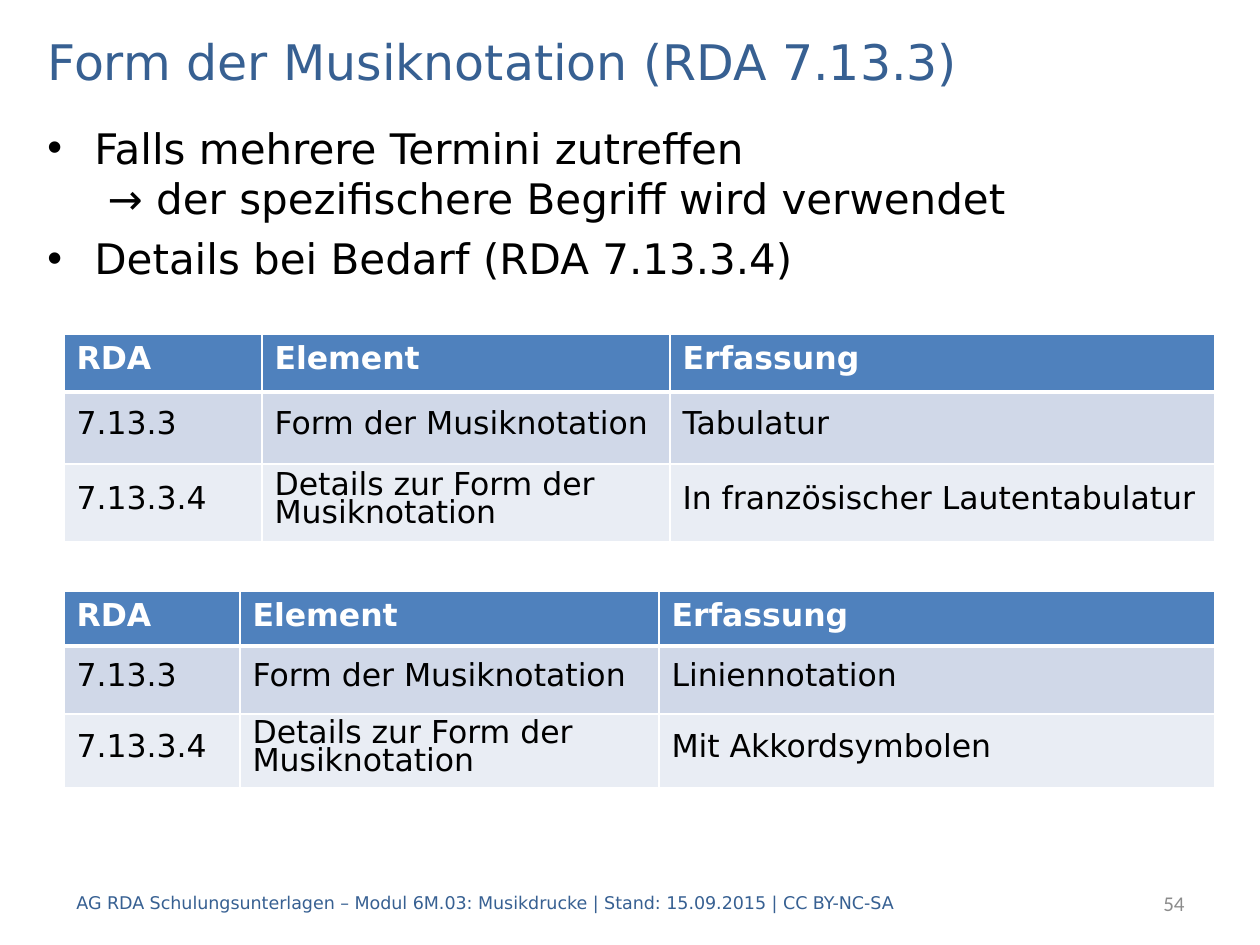
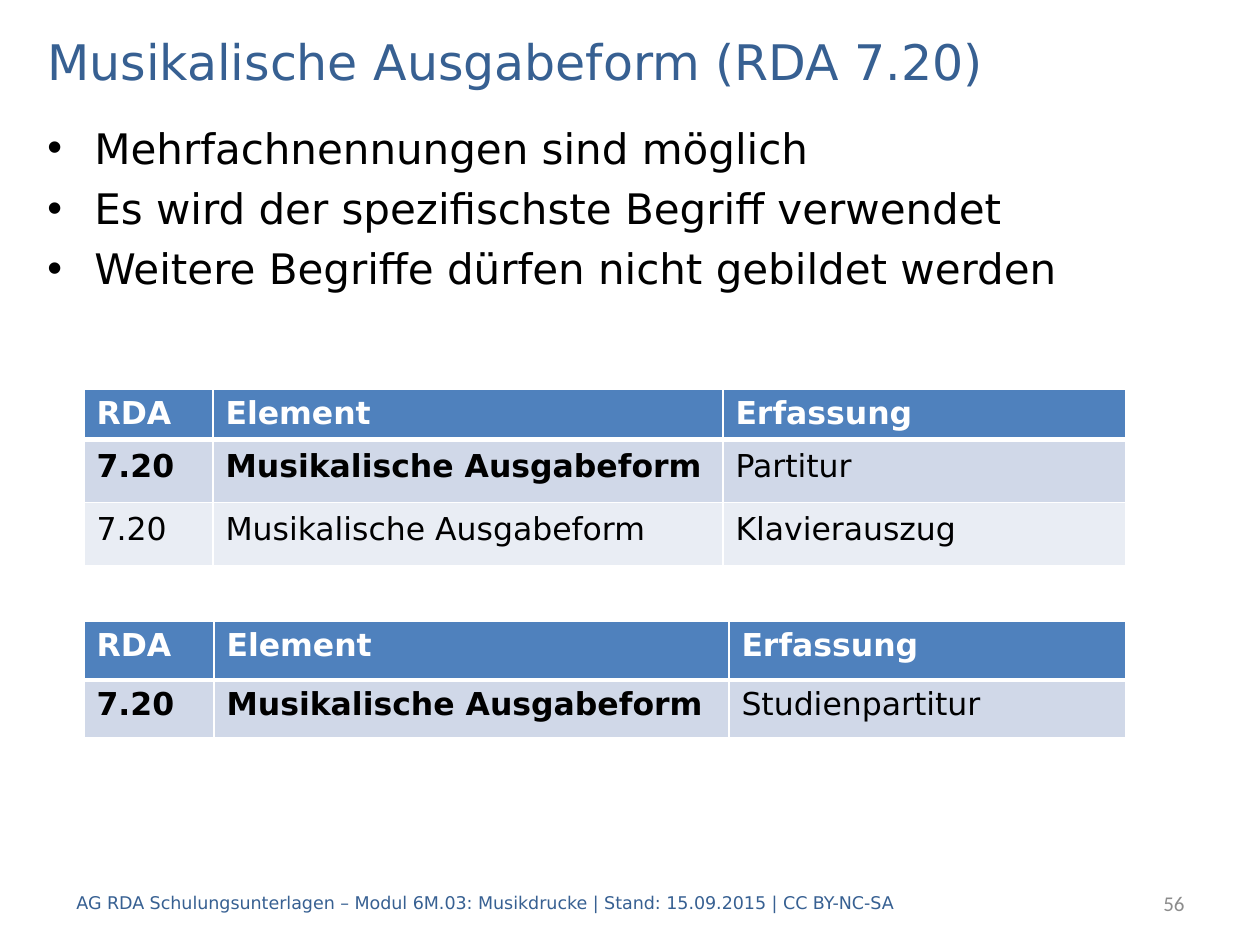
from lxml.etree import SubElement as Sub
from pptx import Presentation
from pptx.dml.color import RGBColor as Rgb
from pptx.enum.text import MSO_ANCHOR as Anchor, MSO_AUTO_SIZE as Auto, PP_ALIGN as Align
from pptx.oxml.ns import qn
from pptx.util import Pt

DECK = [
    {
        "title": "Form der Musiknotation (RDA 7.13.3)",
        "points": [
            "Falls mehrere Termini zutreffen\n → der spezifischere Begriff wird verwendet",
            "Details bei Bedarf (RDA 7.13.3.4)",
        ],
        "page": "54",
        "left": 64,
        "bold": 0,
        "tables": [
            {"top": 334, "cols": [198, 408, 545], "rows": [58, 72, 78], "body": [
                ("7.13.3", "Form der Musiknotation", "Tabulatur"),
                ("7.13.3.4", "Details zur Form der Musiknotation",
                 "In französischer Lautentabulatur")]},
            {"top": 591, "cols": [176, 419, 556], "rows": [55, 68, 74], "body": [
                ("7.13.3", "Form der Musiknotation", "Liniennotation"),
                ("7.13.3.4", "Details zur Form der Musiknotation",
                 "Mit Akkordsymbolen")]},
        ],
    },
    {
        "title": "Musikalische Ausgabeform (RDA 7.20)",
        "points": [
            "Mehrfachnennungen sind möglich",
            "Es wird der spezifischste Begriff verwendet",
            "Weitere Begriffe dürfen nicht gebildet werden",
        ],
        "page": "56",
        "left": 84,
        "bold": 2,
        "tables": [
            {"top": 389, "cols": [129, 510, 403], "rows": [49, 63, 63], "body": [
                ("7.20", "Musikalische Ausgabeform", "Partitur"),
                ("7.20", "Musikalische Ausgabeform", "Klavierauszug")]},
            {"top": 621, "cols": [130, 515, 397], "rows": [59, 58], "body": [
                ("7.20", "Musikalische Ausgabeform", "Studienpartitur")]},
        ],
    },
]
HEAD = ("RDA", "Element", "Erfassung")
FOOT = ("AG RDA Schulungsunterlagen – Modul 6M.03: Musikdrucke"
        " | Stand: 15.09.2015 | CC BY-NC-SA")
HUE = {"title": "376092", "text": "000000", "page": "8C8C8C", "white": "FFFFFF",
       "head": "4F81BD", "odd": "D0D8E8", "even": "E9EDF4"}
FONT = "DejaVu Sans"
BOX = {"title": (35, 25, 1191, 71), "points": (35, 116, 1191, 753),
       "foot": (64, 878, 1052, 50), "page": (997, 878, 200, 50)}
INDENT = 47
SCALE = 914400 / 126


def px(n):
    return round(n * SCALE)


def write(frame, lines, size, hue, font=FONT, bold=False, align=Align.LEFT,
          before=0, after=0, lead=None, bullet=None):
    for i, line in enumerate(lines):
        para = frame.add_paragraph() if i else frame.paragraphs[0]
        para.text = line
        para.alignment = align
        para.space_before, para.space_after = Pt(before), Pt(after)
        if lead:
            para.line_spacing = Pt(lead)
        if bullet:
            prop = para._p.get_or_add_pPr()
            prop.set("marL", str(px(INDENT)))
            prop.set("indent", str(-px(INDENT)))
            Sub(prop, qn("a:buFont"), typeface="Arial")
            Sub(prop, qn("a:buChar"), char=bullet)
        for run in para.runs:
            run.font.name, run.font.size, run.font.bold = font, Pt(size), bold
            run.font.color.rgb = Rgb.from_string(HUE[hue])


def place(shape, area):
    shape.left, shape.top, shape.width, shape.height = map(px, area)


def label(slide, area, lines, anchor=Anchor.MIDDLE, **look):
    box = slide.shapes.add_textbox(*map(px, area))
    box.text_frame.word_wrap = True
    box.text_frame.vertical_anchor = anchor
    write(box.text_frame, lines, **look)


def border(cell, widths):
    prop = cell._tc.get_or_add_tcPr()
    for side, width in zip("LRTB", widths):
        line = Sub(prop, qn(f"a:ln{side}"), w=str(Pt(width)))
        Sub(Sub(line, qn("a:solidFill")), qn("a:srgbClr"), val=HUE["white"])


def grid(slide, left, bold, top, cols, rows, body):
    area = (left, top, sum(cols), sum(rows))
    table = slide.shapes.add_table(len(rows), len(cols), *map(px, area)).table
    for col, wide in zip(table.columns, cols):
        col.width = px(wide)
    for row, high in zip(table.rows, rows):
        row.height = px(high)
    for r, words in enumerate([HEAD, *body]):
        for c, word in enumerate(words):
            cell = table.cell(r, c)
            border(cell, (1, 1, 3 if r == 1 else 1, 1 if r else 3))
            cell.fill.solid()
            fill = ("odd" if r % 2 else "even") if r else "head"
            cell.fill.fore_color.rgb = Rgb.from_string(HUE[fill])
            if r:
                cell.vertical_anchor = Anchor.MIDDLE
                write(cell.text_frame, [word], 18, "text", bold=r == 1 and c < bold,
                      before=6, after=6, lead=16)
            else:
                write(cell.text_frame, [word], 18, "white", bold=True)


def build(deck, data):
    slide = deck.slides.add_slide(deck.slide_layouts[5])
    title = slide.shapes.title
    place(title, BOX["title"])
    title.text_frame.auto_size = Auto.NONE
    title.text_frame.vertical_anchor = Anchor.MIDDLE
    write(title.text_frame, [data["title"]], 28, "title")
    label(slide, BOX["points"], data["points"], Anchor.TOP,
          size=24, hue="text", before=5.6, bullet="•")
    label(slide, BOX["foot"], [FOOT], size=10, hue="title")
    label(slide, BOX["page"], [data["page"]], size=12, hue="page",
          font="Calibri", align=Align.RIGHT)
    for table in data["tables"]:
        grid(slide, data["left"], data["bold"], **table)


def main():
    deck = Presentation()
    deck.slide_width, deck.slide_height = px(1260), px(945)
    for data in DECK:
        build(deck, data)
    deck.save("out.pptx")


if __name__ == "__main__":
    main()
